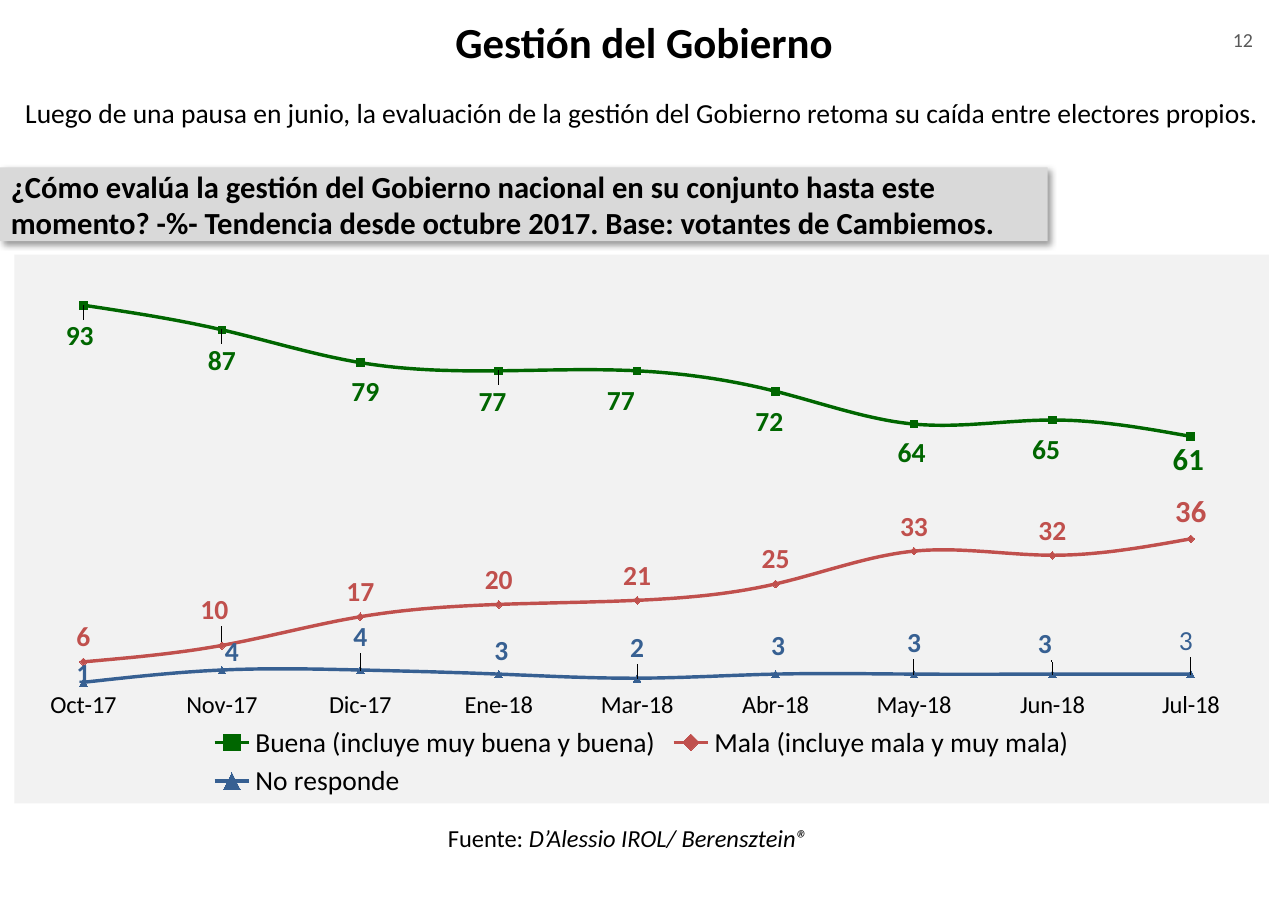
from dataclasses import dataclass

import pptx
import pptx.chart.data
import pptx.dml.color
import pptx.enum.chart
import pptx.enum.shapes
import pptx.enum.text
import pptx.oxml
import pptx.oxml.ns
import pptx.util

Cm, Pt = pptx.util.Cm, pptx.util.Pt
RGB = pptx.dml.color.RGBColor.from_string
XL = pptx.enum.chart
ALIGN = pptx.enum.text.PP_ALIGN
MIDDLE = pptx.enum.text.MSO_ANCHOR.MIDDLE
TOP = pptx.enum.text.MSO_ANCHOR.TOP
NS = pptx.oxml.ns.nsdecls("c", "a")


@dataclass(frozen=True)
class Theme:
    font: str = "Calibri"
    ink: str = "000000"
    muted: str = "595959"
    banner: str = "D9D9D9"
    panel: str = "F2F2F2"
    good: str = "006600"
    bad: str = "C0504D"
    none: str = "376092"
    title: int = 28
    heading: int = 20
    body: int = 18
    small: int = 16
    page: int = 13
    line: float = 2.25
    marker: int = 5


MONTHS = ["Oct-17", "Nov-17", "Dic-17", "Ene-18", "Mar-18",
          "Abr-18", "May-18", "Jun-18", "Jul-18"]
T = Theme()
# Label shifts are percentages of the chart's width and height, by point
SERIES = [
    dict(name="Buena (incluye muy buena y buena)", color=T.good,
         values=[93, 87, 79, 77, 77, 72, 64, 65, 61],
         marker=XL.XL_MARKER_STYLE.SQUARE, position=XL.XL_LABEL_POSITION.CENTER,
         shifts={0: (-0.3, 5.6), 1: (0, 5.6), 2: (0.4, 5.3), 3: (-0.5, 5.6),
                 4: (-1.3, 5.5), 5: (-0.5, 5.5), 6: (-0.2, 5.3),
                 7: (-0.5, 5.5), 8: (-0.2, 4.2)},
         last=dict(size=Pt(T.heading), bold=True)),
    dict(name="Mala (incluye mala y muy mala)", color=T.bad,
         values=[6, 10, 17, 20, 21, 25, 33, 32, 36],
         marker=XL.XL_MARKER_STYLE.DIAMOND, position=XL.XL_LABEL_POSITION.ABOVE,
         shifts={1: (-0.6, -2), 8: (0, 0)},
         last=dict(size=Pt(T.heading), bold=True)),
    dict(name="No responde", color=T.none,
         values=[1, 4, 4, 3, 2, 3, 3, 3, 3],
         marker=XL.XL_MARKER_STYLE.TRIANGLE, position=XL.XL_LABEL_POSITION.CENTER,
         shifts={0: (0, -1.6), 1: (0.8, -3.3), 2: (0, -6), 3: (0.2, -4.2),
                 4: (0, -5.6), 5: (0.2, -5.1), 6: (0, -5.8),
                 7: (-0.6, -5.6), 8: (-0.4, -6)},
         last=dict(size=Pt(T.body), bold=False)),
]


def apply(obj, **values):
    for name, value in values.items():
        setattr(obj, name, value)


def layout_xml(x, y, mode="", size=""):
    return pptx.oxml.parse_xml(
        f'<c:layout {NS}><c:manualLayout>{mode}<c:x val="{x}"/><c:y val="{y}"/>'
        f'{size}</c:manualLayout></c:layout>')


class Deck:
    def __init__(self, theme):
        self.theme = theme
        self.prs = pptx.Presentation()
        apply(self.prs, slide_width=Cm(29.7), slide_height=Cm(21))
        self.s = self.prs.slides.add_slide(self.prs.slide_layouts[6])

    def style(self, font, color=None, **values):
        apply(font, name=self.theme.font, **values)
        font.color.rgb = RGB(color or self.theme.ink)

    def set_text(self, sp, runs, align=ALIGN.LEFT, anchor=MIDDLE, **font):
        tf = sp.text_frame
        apply(tf, word_wrap=True, vertical_anchor=anchor)
        p = tf.paragraphs[0]
        p.alignment = align
        for text, extra in runs:
            r = p.add_run()
            r.text = text
            self.style(r.font, **font, **extra)

    def text(self, box, runs, **fmt):
        self.set_text(self.s.shapes.add_textbox(*map(Cm, box)), runs, **fmt)

    def banner(self, box, runs, **fmt):
        kind = pptx.enum.shapes.MSO_SHAPE.RECTANGLE
        sp = self.s.shapes.add_shape(kind, *map(Cm, box))
        sp.fill.solid()
        sp.fill.fore_color.rgb = RGB(self.theme.banner)
        sp.line.fill.background()
        sp.shadow.inherit = False
        effects = sp._element.spPr.find(pptx.oxml.ns.qn("a:effectLst"))
        effects.append(pptx.oxml.parse_xml(
            f'<a:outerShdw {NS} blurRad="{Pt(4)}" dist="{Pt(3)}" dir="2700000">'
            '<a:srgbClr val="000000"><a:alpha val="40000"/></a:srgbClr></a:outerShdw>'))
        self.set_text(sp, runs, **fmt)

    def line_chart(self, box, months, series):
        t = self.theme
        data = pptx.chart.data.CategoryChartData(number_format="0")
        data.categories = months
        for row in series:
            data.add_series(row["name"], row["values"])
        chart = self.s.shapes.add_chart(
            XL.XL_CHART_TYPE.LINE_MARKERS, *map(Cm, box), data).chart
        apply(chart, has_title=False, has_legend=True)
        self.style(chart.font, size=Pt(t.body))
        apply(chart.legend, position=XL.XL_LEGEND_POSITION.BOTTOM,
              include_in_layout=False)
        self.style(chart.legend.font, size=Pt(t.body))

        # Axes
        apply(chart.value_axis, minimum_scale=0, maximum_scale=100,
              has_major_gridlines=False, visible=False)
        axis = chart.category_axis
        axis.major_tick_mark = XL.XL_TICK_MARK.NONE
        axis.format.line.fill.background()
        self.style(axis.tick_labels.font, size=Pt(t.small))

        # Panel and plot area
        root = chart._chartSpace
        root.find(pptx.oxml.ns.qn("c:chart")).addnext(pptx.oxml.parse_xml(
            f'<c:spPr {NS}><a:solidFill><a:srgbClr val="{t.panel}"/></a:solidFill>'
            '<a:ln><a:noFill/></a:ln></c:spPr>'))
        area = root.xpath("c:chart/c:plotArea")[0]
        for old in area.xpath("c:layout"):
            area.remove(old)
        area.insert(0, layout_xml(
            0, 0.04,
            mode='<c:layoutTarget val="inner"/><c:xMode val="edge"/><c:yMode val="edge"/>',
            size='<c:w val="0.993"/><c:h val="0.747"/>'))

        chart.plots[0].vary_by_categories = False
        for ser, row in zip(chart.plots[0].series, series):
            self.trend(ser, row)

    def trend(self, ser, row):
        t = self.theme
        color = RGB(row["color"])
        ser.smooth = True
        ser.format.line.color.rgb = color
        ser.format.line.width = Pt(t.line)
        apply(ser.marker, style=row["marker"], size=t.marker)
        ser.marker.format.fill.solid()
        ser.marker.format.fill.fore_color.rgb = color
        ser.marker.format.line.color.rgb = color

        # Value labels
        plain = dict(size=Pt(t.body), bold=True)
        labels = ser.data_labels
        apply(labels, show_value=True, position=row["position"],
              number_format="0", number_format_is_linked=False)
        self.style(labels.font, row["color"], **plain)
        last = len(row["values"]) - 1
        for i, (dx, dy) in row["shifts"].items():
            label = ser.points[i].data_label
            self.style(label.font, row["color"], **(row["last"] if i == last else plain))
            label.position = row["position"]
            node = ser._element.xpath(f"c:dLbls/c:dLbl[c:idx/@val='{i}']")[0]
            node.insert(1, layout_xml(round(dx / 100, 3), round(dy / 100, 3)))


def main():
    d = Deck(T)
    # Page number, title and lead
    d.text((27.53, 0.51, 2.26, 1.12), [("12", {})], align=ALIGN.CENTER,
           anchor=TOP, size=Pt(T.page), color=T.muted)
    d.text((0, -0.25, 29.7, 2.39), [("Gestión del Gobierno", {})],
           align=ALIGN.CENTER, size=Pt(T.title), bold=True)
    d.text((-0.05, 2.08, 29.7, 1.02),
           [("Luego de una pausa en junio, la evaluación de la gestión del Gobierno "
             "retoma su caída entre electores propios.", {})],
           align=ALIGN.CENTER, size=Pt(T.body))
    # Trend chart under its question
    d.line_chart((0.33, 5.87, 28.93, 12.65), MONTHS, SERIES)
    d.banner((0, 3.86, 24.16, 1.7),
             [("¿Cómo evalúa la gestión del Gobierno nacional en su conjunto hasta "
               "este momento? -%- Tendencia desde octubre 2017. Base: votantes de "
               "Cambiemos.", {})], size=Pt(T.heading), bold=True)
    # Source
    d.text((10.08, 18.85, 9.47, 0.94),
           [("Fuente: ", {}), ("D’Alessio IROL/ Berensztein®", {"italic": True})],
           anchor=TOP, size=Pt(T.small))
    d.prs.save("out.pptx")


if __name__ == "__main__":
    main()
